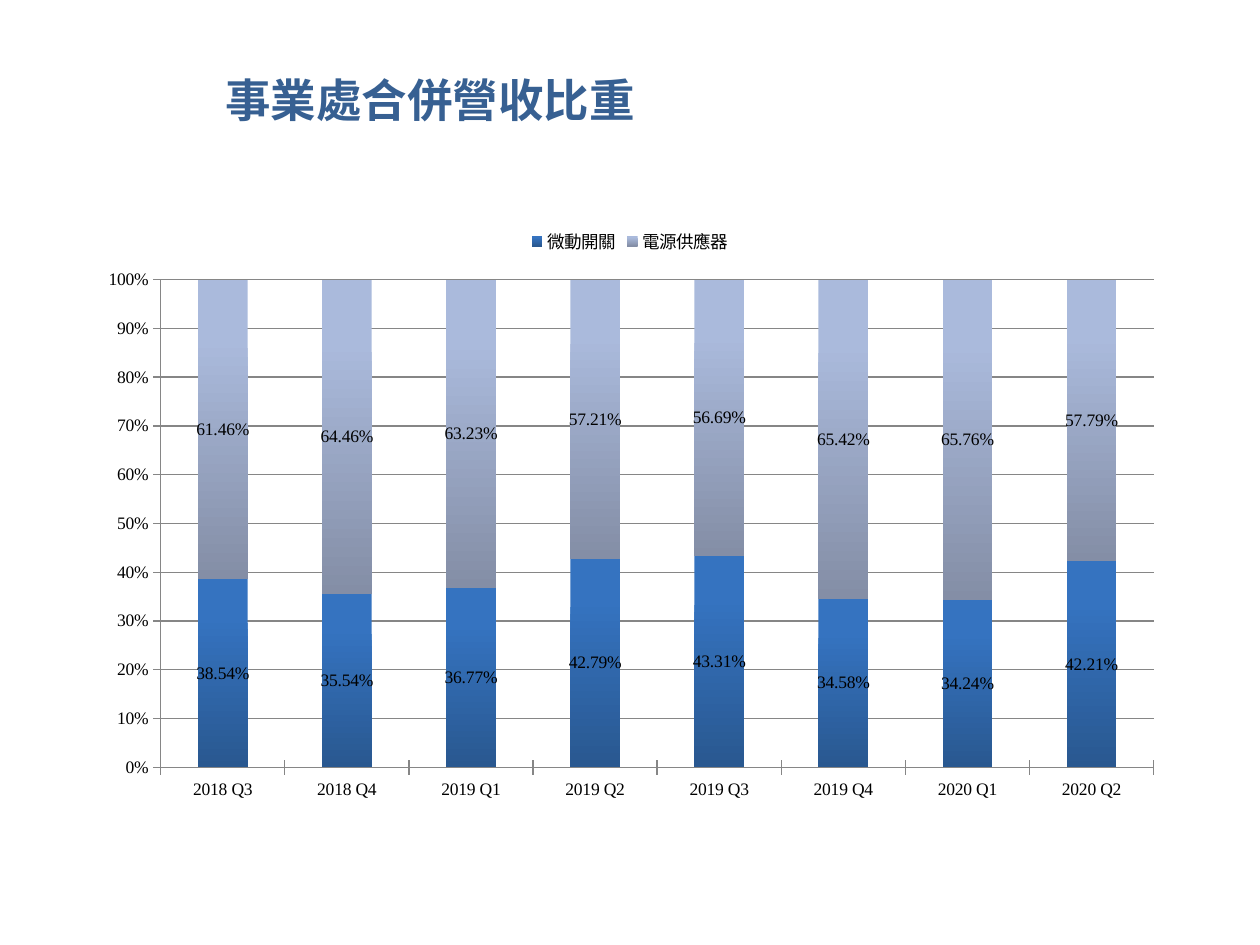
from lxml import etree
from pptx import Presentation
from pptx.chart.data import CategoryChartData
from pptx.dml.color import RGBColor
from pptx.enum.chart import (XL_CHART_TYPE, XL_LABEL_POSITION,
                             XL_LEGEND_POSITION, XL_TICK_MARK)
from pptx.oxml.ns import qn
from pptx.util import Pt

STACKED = XL_CHART_TYPE.COLUMN_STACKED
CENTER = XL_LABEL_POSITION.CENTER
TOP = XL_LEGEND_POSITION.TOP
CROSS = XL_TICK_MARK.CROSS

FONT = "Times New Roman"
NAVY = RGBColor(0x37, 0x60, 0x92)
BLACK = RGBColor(0, 0, 0)
GRAY = RGBColor(0x86, 0x86, 0x86)
# Top and bottom colour of each series
BLUES = (RGBColor(0x35, 0x73, 0xC0), RGBColor(0x29, 0x58, 0x90))
PALES = (RGBColor(0xAA, 0xBA, 0xDC), RGBColor(0x84, 0x8E, 0xA6))

QUARTERS = ["2018 Q3", "2018 Q4", "2019 Q1", "2019 Q2",
            "2019 Q3", "2019 Q4", "2020 Q1", "2020 Q2"]
SHARES = [
    ("微動開關", BLUES, [0.3854, 0.3554, 0.3677, 0.4279,
                     0.4331, 0.3458, 0.3424, 0.4221]),
    ("電源供應器", PALES, [0.6146, 0.6446, 0.6323, 0.5721,
                      0.5669, 0.6542, 0.6576, 0.5779]),
]


def style(font, size, color, bold=False):
    font.name, font.size, font.bold = FONT, Pt(size), bold
    font.color.rgb = color


def write(frame, text, size=10, color=BLACK, bold=False):
    run = frame.paragraphs[0].add_run()
    run.text = text
    style(run.font, size, color, bold)


class Page:
    def __init__(self, slide):
        self.slide = slide
        self.size = 10

    def text(self, text, left, top, width, height, **look):
        box = self.slide.shapes.add_textbox(
            Pt(left), Pt(top), Pt(width), Pt(height))
        box.text_frame.word_wrap = True
        write(box.text_frame, text, **look)

    def chart(self, cats, rows, left, top, width, height):
        data = CategoryChartData(number_format="0.00%")
        data.categories = cats
        for name, _, vals in rows:
            data.add_series(name, vals)
        chart = self.slide.shapes.add_chart(
            STACKED, Pt(left), Pt(top), Pt(width), Pt(height), data).chart
        style(chart.font, self.size, BLACK)
        chart.has_title = False
        chart.has_legend = True
        chart.legend.position = TOP
        chart.legend.include_in_layout = False

        plot = chart.plots[0]
        plot.gap_width, plot.overlap = 150, 100
        plot.vary_by_categories = False
        for series, (_, shades, _) in zip(plot.series, rows):
            self.shade(series.format.fill, shades)
            labels = series.data_labels
            labels.show_value = True
            labels.number_format = "0.00%"
            labels.number_format_is_linked = False
            labels.position = CENTER
            style(labels.font, self.size, BLACK)
        self.axes(chart)
        self.place(chart, x=0.07, y=0.11, w=0.91, h=0.82)

    def shade(self, fill, shades):
        fill.gradient()
        fill.gradient_angle = 270
        for stop, color, spot in zip(fill.gradient_stops, shades, (0.2, 1)):
            stop.color.rgb = color
            stop.position = spot

    def axes(self, chart):
        value = chart.value_axis
        value.minimum_scale, value.maximum_scale = 0, 1
        value.major_unit = 0.1
        value.has_major_gridlines = True
        value.major_gridlines.format.line.color.rgb = GRAY
        value.tick_labels.number_format = "0%"
        value.tick_labels.number_format_is_linked = False
        for axis in (chart.category_axis, value):
            axis.major_tick_mark = CROSS
            axis.format.line.color.rgb = GRAY
            style(axis.tick_labels.font, self.size, BLACK)

    def place(self, chart, **parts):
        # Fix the inner plot area as fractions of the chart
        area = chart.plots[0]._element.getparent()
        for old in area.findall(qn("c:layout")):
            area.remove(old)
        layout = etree.Element(qn("c:layout"))
        area.insert(0, layout)
        manual = etree.SubElement(layout, qn("c:manualLayout"))
        marks = [("layoutTarget", "inner"), ("xMode", "edge"),
                 ("yMode", "edge"), *parts.items()]
        for tag, val in marks:
            etree.SubElement(manual, qn("c:" + tag), val=str(val))


def main():
    deck = Presentation()
    deck.slide_width, deck.slide_height = Pt(720), Pt(540)
    page = Page(deck.slides.add_slide(deck.slide_layouts[6]))

    # Title
    page.text("事業處合併營收比重", 121.7, 37.4, 544, 39,
              size=26, color=NAVY, bold=True)

    # Revenue share by quarter
    page.chart(QUARTERS, SHARES, 48.2, 122.4, 623.5, 340)

    deck.save("out.pptx")


if __name__ == "__main__":
    main()
